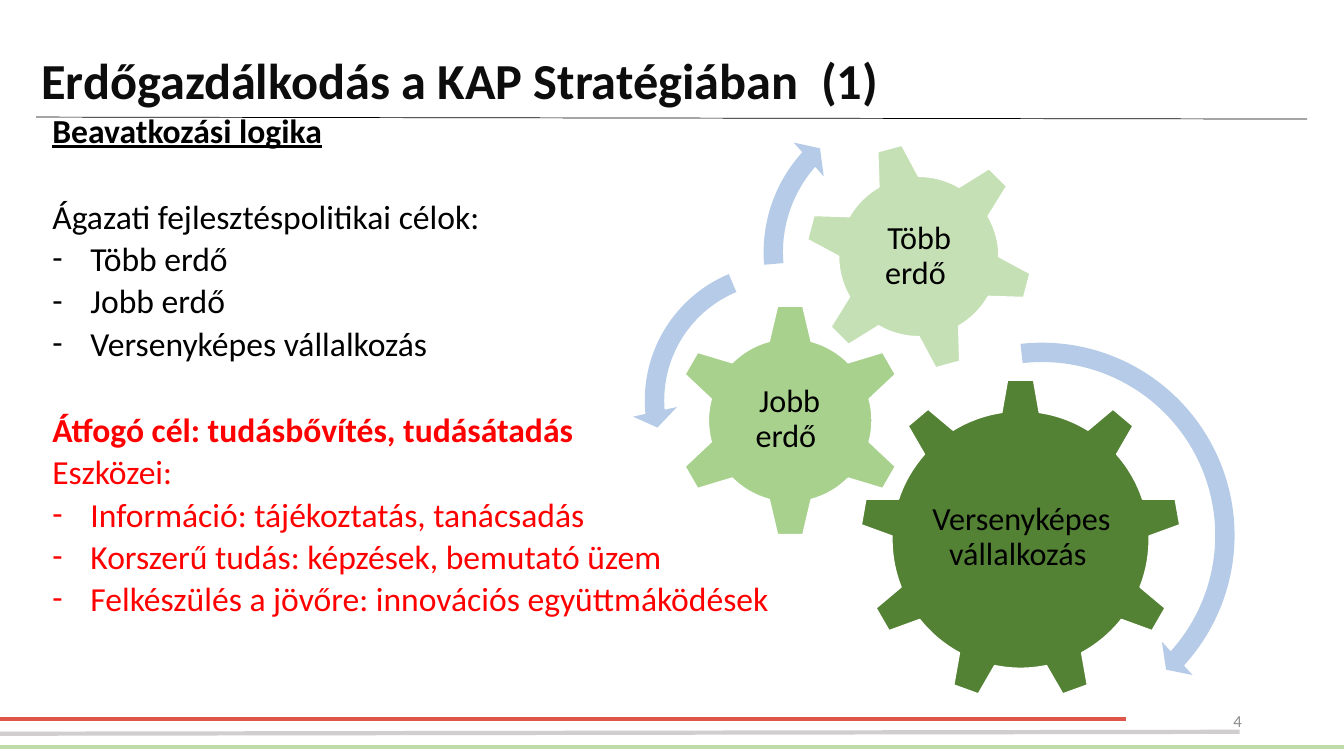
import pptx
import pptx.util
import pptx.dml.color
import pptx.enum.shapes
import pptx.enum.text
import pptx.oxml.ns
import lxml.etree

Cm, Pt = pptx.util.Cm, pptx.util.Pt
RGBColor = pptx.dml.color.RGBColor
SHAPE = pptx.enum.shapes.MSO_SHAPE
ALIGN = pptx.enum.text.PP_ALIGN
ANCHOR = pptx.enum.text.MSO_ANCHOR
qn = pptx.oxml.ns.qn

BLACK = RGBColor(0x00, 0x00, 0x00)
WHITE = RGBColor(0xFF, 0xFF, 0xFF)
TITLE_BLACK = RGBColor(0x0D, 0x0D, 0x0D)
NUMBER_GREY = RGBColor(0x8C, 0x8C, 0x8C)
RED = RGBColor(0xFF, 0x00, 0x00)
FOOTER_RED = RGBColor(0xE0, 0x55, 0x4A)
FOOTER_GREEN = RGBColor(0xBE, 0xDC, 0xAA)
FOOTER_GREY = RGBColor(0xD0, 0xCE, 0xCE)
DARK_GREEN = RGBColor(0x54, 0x82, 0x35)
MID_GREEN = RGBColor(0xA9, 0xD1, 0x8E)
PALE_GREEN = RGBColor(0xC5, 0xE0, 0xB4)
ARROW_BLUE = RGBColor(0xB5, 0xCB, 0xE7)

deck = pptx.Presentation()
deck.slide_width, deck.slide_height = Cm(33.87), Cm(19.05)
page = deck.slides.add_slide(deck.slide_layouts[6])


def add_box(place, anchor=ANCHOR.TOP, inset=None):
    box = page.shapes.add_textbox(*map(Cm, place))
    frame = box.text_frame
    frame.word_wrap = True
    frame.vertical_anchor = anchor
    if inset is not None:
        for side in ("left", "top", "right", "bottom"):
            setattr(frame, f"margin_{side}", Cm(inset))
    return frame


def write(para, text, align, **font):
    para.alignment = align
    span = para.add_run()
    span.text = text
    color = font.pop("color")
    for name, value in {"name": "Calibri", **font}.items():
        setattr(span.font, name, value)
    span.font.color.rgb = color


# Footer lines and the rule under the title
for start_x, start_y, end_x, end_y, color, width in (
    (0, 18.11, 28.37, 18.11, FOOTER_RED, 3),
    (0, 18.82, 33.87, 18.82, FOOTER_GREEN, 3),
    (0, 18.49, 31.24, 18.44, FOOTER_GREY, 3),
    (0.91, 2.95, 32.94, 3, BLACK, 0.5),
):
    rule = page.shapes.add_connector(
        pptx.enum.shapes.MSO_CONNECTOR.STRAIGHT,
        Cm(start_x), Cm(start_y), Cm(end_x), Cm(end_y))
    rule.line.color.rgb = color
    rule.line.width = Pt(width)
    lxml.etree.SubElement(rule._element.spPr, qn("a:effectLst"))

number = add_box((23.93, 17.65, 7.62, 1.02), ANCHOR.MIDDLE)
write(number.paragraphs[0], "4", ALIGN.RIGHT, size=Pt(12), color=NUMBER_GREY)

# Body: text, colour, format, space before
heading = {"bold": True, "underline": True}
strong = {"bold": True}
GAP = 31
body_lines = (
    ("Beavatkozási logika", BLACK, heading, 0, False),
    ("Ágazati fejlesztéspolitikai célok:", BLACK, {}, GAP, False),
    ("Több erdő", BLACK, {}, 0, True),
    ("Jobb erdő", BLACK, {}, 0, True),
    ("Versenyképes vállalkozás", BLACK, {}, 0, True),
    ("Átfogó cél: tudásbővítés, tudásátadás", RED, strong, GAP, False),
    ("Eszközei:", RED, {}, 0, False),
    ("Információ: tájékoztatás, tanácsadás", RED, {}, 0, True),
    ("Korszerű tudás: képzések, bemutató üzem", RED, {}, 0, True),
    ("Felkészülés a jövőre: innovációs együttmáködések", RED, {}, 0, True),
)
body = add_box((1.07, 2.64, 32.13, 15.49))
for index, (text, color, font, gap, bulleted) in enumerate(body_lines):
    para = body.add_paragraph() if index else body.paragraphs[0]
    if bulleted:
        properties = para._p.get_or_add_pPr()
        properties.set("marL", str(Cm(0.96)))
        properties.set("indent", str(Cm(-0.96)))
        lxml.etree.SubElement(properties, qn("a:buFont"), typeface="Calibri")
        lxml.etree.SubElement(properties, qn("a:buChar"), char="-")
    if gap:
        para.space_before = Pt(gap)
    para.space_after = Pt(1.5)
    write(para, text, ALIGN.JUSTIFY, size=Pt(24), color=color, **font)

title = add_box((0.79, 1.12, 26.06, 1.8))
write(title.paragraphs[0], "Erdőgazdálkodás a KAP Stratégiában  (1)", ALIGN.LEFT,
      size=Pt(36), bold=True, color=TITLE_BLACK)

# Gears: left, top, size, then the place of the label
for kind, left, top, size, turn, color, label, label_place in (
    (SHAPE.GEAR_9, 21.67, 9.55, 8.1, 0, DARK_GREEN,
     "Versenyképes vállalkozás ", (23.32, 11.46, 4.85, 4.17)),
    (SHAPE.GEAR_6, 16.97, 7.65, 5.89, 0, MID_GREEN,
     "Jobb erdő ", (18.44, 9.12, 2.92, 2.9)),
    (SHAPE.GEAR_6, 20.27, 3.58, 5.77, 345, PALE_GREEN,
     "Több erdő ", (21.54, 4.85, 3.25, 3.25)),
):
    gear = page.shapes.add_shape(kind, Cm(left), Cm(top), Cm(size), Cm(size))
    gear.rotation = turn
    gear.shadow.inherit = False
    gear.fill.solid()
    gear.fill.fore_color.rgb = color
    gear.line.color.rgb = WHITE
    gear.line.width = Pt(1)
    para = add_box(label_place, ANCHOR.MIDDLE, 0.08).paragraphs[0]
    para.line_spacing = 0.9
    write(para, label, ALIGN.CENTER, size=Pt(23), color=BLACK)

# Arrows that show which way each gear turns
for kind, left, top, size, adjustments in (
    (SHAPE.CIRCULAR_ARROW, 21.08, 8.31, 10.36,
     (0.047, 2.99, 25.375, 158.16, 0.055)),
    (SHAPE.LEFT_CIRCULAR_ARROW, 15.93, 6.32, 7.54,
     (0.065, 4.3, 104.891, 148.378, 0.075)),
    (SHAPE.CIRCULAR_ARROW, 18.92, 2.29, 8.13,
     (0.06, 3.941, 133.138, 105.082, 0.07)),
):
    arrow = page.shapes.add_shape(kind, Cm(left), Cm(top), Cm(size), Cm(size))
    for index, value in enumerate(adjustments):
        arrow.adjustments[index] = value
    arrow.shadow.inherit = False
    arrow.fill.solid()
    arrow.fill.fore_color.rgb = ARROW_BLUE
    arrow.line.fill.background()

deck.save("out.pptx")
